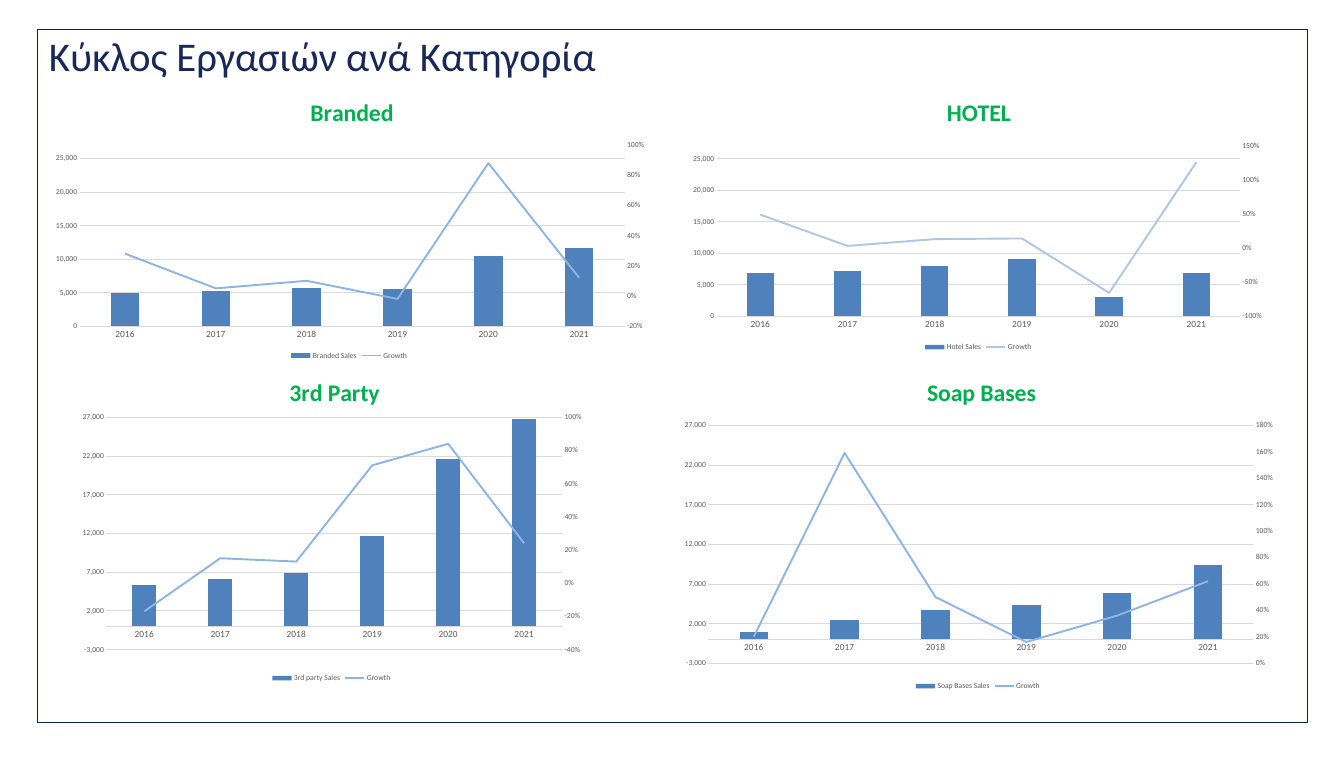
import copy
from dataclasses import dataclass

import pptx
import pptx.chart.axis
import pptx.chart.data
import pptx.dml.color
import pptx.enum.chart
import pptx.enum.shapes
import pptx.enum.text
import pptx.oxml
import pptx.oxml.ns
import pptx.util

Cm = pptx.util.Cm
Pt = pptx.util.Pt
qn = pptx.oxml.ns.qn


@dataclass(frozen=True)
class Theme:
    font: str = "Calibri"
    heading: str = "192957"
    frame: str = "0F243E"
    chart_title: str = "00B050"
    label: str = "595959"
    grid: str = "D9D9D9"
    bar: str = "4F81BD"
    growth: str = "8EB4E3"
    growth_pale: str = "B0C6E1"
    heading_size: int = 48
    chart_title_size: int = 28
    chart_size: int = 10
    category_size: int = 11
    value_size: int = 9


THEME = Theme()
HEADING = "Κύκλος Εργασιών ανά Κατηγορία"
HEADING_BOX = (1.78, 1.17, 33.88, 2.31)
FRAME_BOX = (1.53, 1.19, 52.78, 28.8)
YEARS = ["2016", "2017", "2018", "2019", "2020", "2021"]
CHARTS = [
    dict(title="Branded", title_at=(0.43, 0.03), box=(1.78, 3.48, 25.45, 11.58),
         plot=(0.06, 0.22, 0.89, 0.65), sales_name="Branded Sales",
         sales=[4900, 5200, 5700, 5500, 10400, 11600],
         growth=[0.28, 0.05, 0.1, -0.02, 0.88, 0.12],
         sales_min=0, growth_scale=(-0.2, 1, 0.2), line=THEME.growth),
    dict(title="HOTEL", title_at=(0.44, 0.03), box=(28.3, 3.48, 24.71, 11.23),
         plot=(0.06, 0.23, 0.88, 0.63), sales_name="Hotel Sales",
         sales=[6900, 7100, 8000, 9100, 3100, 6900],
         growth=[0.49, 0.03, 0.13, 0.14, -0.66, 1.26],
         sales_min=0, growth_scale=(-1, 1.5, 0.5), line=THEME.growth_pale),
    dict(title="3rd Party", title_at=(0.42, 0.03), box=(1.78, 15.06, 23.98, 13.41),
         plot=(0.11, 0.17, 0.79, 0.72), sales_name="3rd party Sales",
         sales=[5300, 6100, 6900, 11700, 21600, 26800],
         growth=[-0.17, 0.15, 0.13, 0.71, 0.84, 0.24],
         sales_min=-3000, growth_scale=(-0.4, 1, 0.2), line=THEME.growth),
    dict(title="Soap Bases", title_at=(0.41, 0.03), box=(27.91, 15.06, 25.45, 13.74),
         plot=(0.06, 0.19, 0.89, 0.72), sales_name="Soap Bases Sales",
         sales=[900, 2500, 3700, 4300, 5800, 9400],
         growth=[0.2, 1.59, 0.5, 0.16, 0.36, 0.62],
         sales_min=-3000, growth_scale=(0, 1.8, 0.2), line=THEME.growth),
]


def rgb(color):
    return pptx.dml.color.RGBColor.from_string(color)


def lengths(box):
    return [Cm(value) for value in box]


def set_font(font, size, color, bold=False):
    font.name = THEME.font
    font.size = Pt(size)
    font.bold = bold
    font.color.rgb = rgb(color)


def set_line(line, color, width):
    line.color.rgb = rgb(color)
    line.width = Pt(width)


def chart_element(tag, content):
    namespace = pptx.oxml.ns.nsdecls("c")
    return pptx.oxml.parse_xml(f"<c:{tag} {namespace}>{content}</c:{tag}>")


def set_layout(parent, index, values, inner=False):
    for layout in parent.findall(qn("c:layout")):
        parent.remove(layout)
    content = '<c:layoutTarget val="inner"/>' if inner else ""
    names = ("x", "y", "w", "h")[:len(values)]
    content += "".join(f'<c:{name}Mode val="edge"/>' for name in names[:2])
    content += "".join(f'<c:{name} val="{value}"/>' for name, value in zip(names, values))
    layout = chart_element("layout", f"<c:manualLayout>{content}</c:manualLayout>")
    parent.insert(index, layout)


def set_scale(axis, minimum, maximum, unit, number_format):
    axis.minimum_scale = minimum
    axis.maximum_scale = maximum
    axis.major_unit = unit
    axis.tick_labels.number_format = number_format
    axis.tick_labels.number_format_is_linked = False


def format_axes(chart, sales_min):
    sales_axis = chart.value_axis
    for axis, size in ((chart.category_axis, THEME.category_size),
                       (sales_axis, THEME.value_size)):
        axis.major_tick_mark = pptx.enum.chart.XL_TICK_MARK.NONE
        axis.minor_tick_mark = pptx.enum.chart.XL_TICK_MARK.NONE
        set_font(axis.tick_labels.font, size, THEME.label)
    set_line(chart.category_axis.format.line, THEME.grid, 0.75)
    sales_axis.format.line.fill.background()
    sales_axis.has_major_gridlines = True
    set_line(sales_axis.major_gridlines.format.line, THEME.grid, 0.75)
    set_scale(sales_axis, sales_min, 27000, 5000, "#,##0")


def move_growth_to_right_axis(chart, scale):
    plot_area = chart.element.find(".//" + qn("c:plotArea"))
    bars = plot_area.find(qn("c:barChart"))
    growth = bars.findall(qn("c:ser"))[1]
    for invert in growth.findall(qn("c:invertIfNegative")):
        growth.remove(invert)
    lines = chart_element("lineChart", '<c:grouping val="standard"/><c:varyColors val="0"/>'
                          '<c:marker val="1"/><c:axId val="3001"/><c:axId val="3002"/>')
    lines.insert(2, growth)
    bars.addnext(lines)

    category = copy.deepcopy(plot_area.find(qn("c:catAx")))
    value = copy.deepcopy(plot_area.find(qn("c:valAx")))
    plot_area.findall(qn("c:valAx"))[-1].addnext(value)
    value.addnext(category)
    for element, own, other in ((category, "3001", "3002"), (value, "3002", "3001")):
        element.find(qn("c:axId")).set("val", own)
        element.find(qn("c:crossAx")).set("val", other)
    for crosses in value.findall(qn("c:crosses")):
        value.remove(crosses)
    value.find(qn("c:crossAx")).addnext(
        pptx.oxml.parse_xml(f'<c:crosses {pptx.oxml.ns.nsdecls("c")} val="max"/>'))
    for position in value.findall(qn("c:axPos")):
        position.set("val", "r")
    growth_axis = pptx.chart.axis.ValueAxis(value)
    growth_axis.has_major_gridlines = False
    set_scale(growth_axis, *scale, "0%")
    pptx.chart.axis.CategoryAxis(category).visible = False
    return plot_area


def add_sales_chart(slide, content):
    data = pptx.chart.data.CategoryChartData()
    data.categories = YEARS
    data.add_series(content["sales_name"], content["sales"], "#,##0")
    data.add_series("Growth", content["growth"], "0%")
    chart = slide.shapes.add_chart(
        pptx.enum.chart.XL_CHART_TYPE.COLUMN_CLUSTERED, *lengths(content["box"]), data).chart
    set_font(chart.font, THEME.chart_size, "000000")

    chart.has_title = True
    title = chart.chart_title
    title.text_frame.text = content["title"]
    set_font(title.text_frame.paragraphs[0].runs[0].font,
             THEME.chart_title_size, THEME.chart_title, True)
    set_layout(title._element, 1, content["title_at"])
    chart.has_legend = True
    chart.legend.position = pptx.enum.chart.XL_LEGEND_POSITION.BOTTOM
    chart.legend.include_in_layout = False
    set_font(chart.legend.font, THEME.value_size, THEME.label)

    format_axes(chart, content["sales_min"])
    plot_area = move_growth_to_right_axis(chart, content["growth_scale"])
    set_layout(plot_area, 0, content["plot"], inner=True)
    bars, lines = chart.plots
    bars.vary_by_categories = False
    bars.gap_width = 219
    bars.overlap = -27
    fill = bars.series[0].format.fill
    fill.solid()
    fill.fore_color.rgb = rgb(THEME.bar)
    growth = lines.series[0]
    growth.smooth = False
    growth.marker.style = pptx.enum.chart.XL_MARKER_STYLE.NONE
    set_line(growth.format.line, content["line"], 2.25)


def main():
    presentation = pptx.Presentation()
    presentation.slide_width = Cm(55.85)
    presentation.slide_height = Cm(31.5)
    slide = presentation.slides.add_slide(presentation.slide_layouts.get_by_name("Title Only"))

    heading = slide.shapes.title
    heading.left, heading.top, heading.width, heading.height = lengths(HEADING_BOX)
    heading.text_frame.text = HEADING
    heading.text_frame.vertical_anchor = pptx.enum.text.MSO_ANCHOR.TOP
    paragraph = heading.text_frame.paragraphs[0]
    paragraph.alignment = pptx.enum.text.PP_ALIGN.LEFT
    set_font(paragraph.runs[0].font, THEME.heading_size, THEME.heading)

    frame = slide.shapes.add_shape(
        pptx.enum.shapes.MSO_SHAPE.RECTANGLE, *lengths(FRAME_BOX))
    frame.shadow.inherit = False
    frame.fill.background()
    set_line(frame.line, THEME.frame, 0.25)

    for content in CHARTS:
        add_sales_chart(slide, content)
    presentation.save("out.pptx")


if __name__ == "__main__":
    main()
